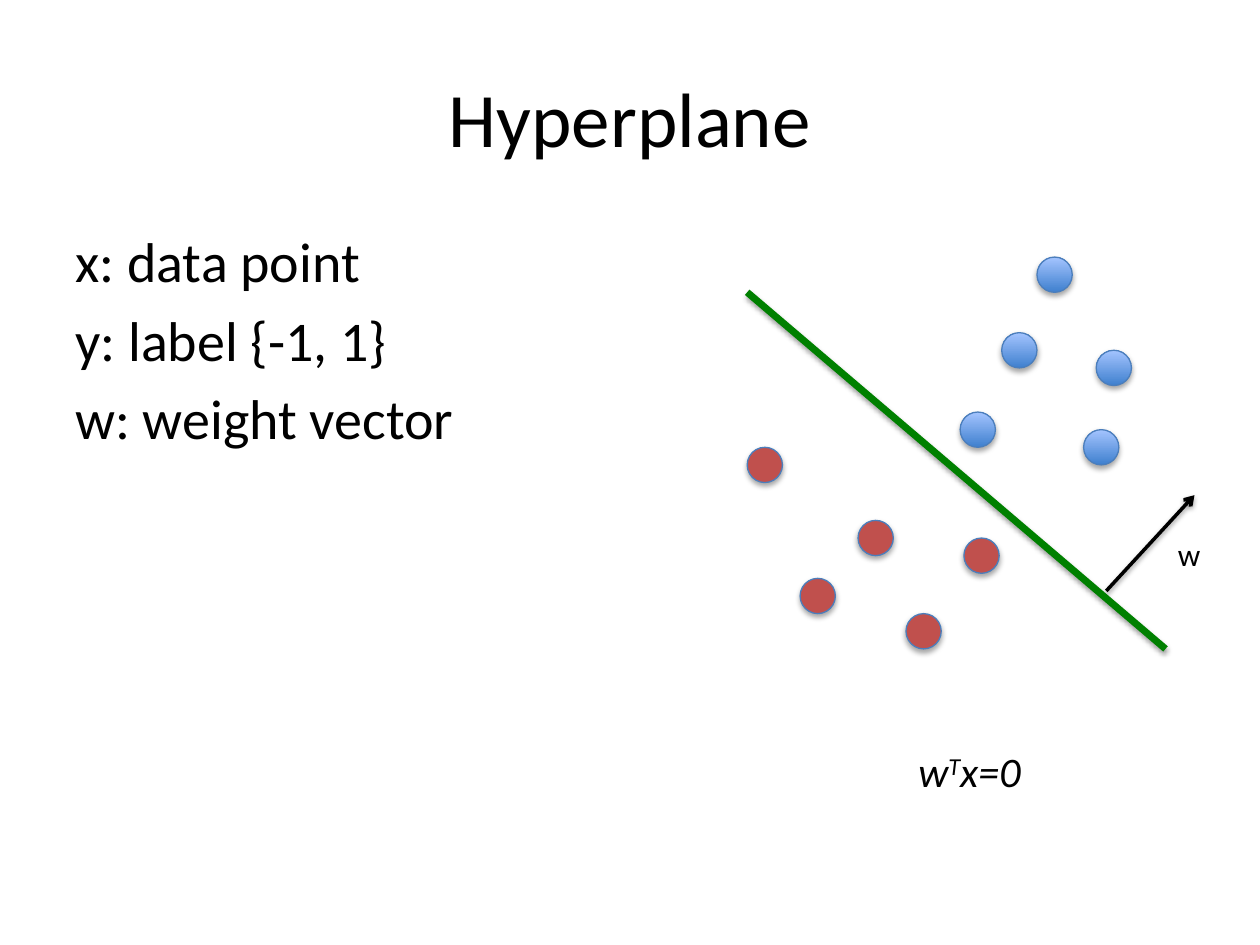
"""Build a slide showing a hyperplane that separates two classes of data points."""
from dataclasses import dataclass

from lxml import etree
from pptx import Presentation
from pptx import util as u
from pptx.dml.color import RGBColor
from pptx.enum import shapes, text
from pptx.oxml.ns import qn


@dataclass(frozen=True)
class Theme:
    font: str = "Calibri"
    title: float = 44
    body: float = 32
    formula: float = 24
    label: float = 18
    ink: RGBColor = RGBColor.from_string("000000")
    boundary: RGBColor = RGBColor.from_string("008000")
    outline: RGBColor = RGBColor.from_string("4B7EBC")
    negative: RGBColor = RGBColor.from_string("C0504D")
    positive: tuple = (RGBColor.from_string("3F80CE"), RGBColor.from_string("A4C4FF"))


theme = Theme()


def add_text(container, box, lines, size, wrap=True):
    frame = container.add_textbox(*map(u.Inches, box)).text_frame
    frame.word_wrap = wrap
    frame.text = "\n".join(lines)
    for paragraph in frame.paragraphs:
        paragraph.font.name = theme.font
        paragraph.font.size = u.Pt(size)
        paragraph.font.color.rgb = theme.ink
    return frame


def add_shadow(shape, distance, opacity):
    effects = etree.SubElement(shape.element.spPr, qn("a:effectLst"))
    shadow = etree.SubElement(
        effects, qn("a:outerShdw"), blurRad=str(u.Pt(3.1)), dist=str(u.Pt(distance)),
        dir="5400000", rotWithShape="0")
    color = etree.SubElement(shadow, qn("a:srgbClr"), val=str(theme.ink))
    etree.SubElement(color, qn("a:alpha"), val=str(opacity * 1000))


presentation = Presentation()
presentation.slide_width = u.Inches(10)
presentation.slide_height = u.Inches(7.5)
slide = presentation.slides.add_slide(presentation.slide_layouts[6])

title = add_text(slide.shapes, (0.5, 0.3, 9, 1.25), ["Hyperplane"], theme.title)
title.vertical_anchor = text.MSO_ANCHOR.MIDDLE
title.paragraphs[0].alignment = text.PP_ALIGN.CENTER

definitions = add_text(
    slide.shapes, (0.5, 1.75, 4.33, 2.45),
    ["x: data point", "y: label {-1, 1}", "w: weight vector"], theme.body)
for paragraph in definitions.paragraphs:
    paragraph.space_before = u.Pt(theme.body * 0.2)

diameter = u.Inches(0.28)
positive_points = [(7.95, 2.64), (8.23, 2.04), (8.7, 2.78), (8.6, 3.41), (7.62, 3.27)]
negative_points = [(5.93, 3.55), (6.81, 4.13), (6.35, 4.59), (7.19, 4.87), (7.65, 4.27)]
for points, is_positive in ((positive_points, True), (negative_points, False)):
    group = slide.shapes.add_group_shape()
    for left, top in points:
        dot = group.shapes.add_shape(
            shapes.MSO_SHAPE.OVAL, u.Inches(left), u.Inches(top), diameter, diameter)
        if is_positive:
            dot.fill.gradient()
            dot.fill.gradient_angle = 90
            for stop, position, color in zip(dot.fill.gradient_stops, (0, 1), theme.positive):
                stop.position = position
                stop.color.rgb = color
        else:
            dot.fill.solid()
            dot.fill.fore_color.rgb = theme.negative
        dot.line.color.rgb = theme.outline
        dot.line.width = u.Pt(0.75)
        add_shadow(dot, 1.8, 35)

weight_group = slide.shapes.add_group_shape()
for container, ends, color, width, has_arrow in (
        (slide.shapes, (5.93, 2.32, 9.25, 5.15), theme.boundary, 4, False),
        (weight_group.shapes, (8.78, 4.69, 9.48, 3.93), theme.ink, 2, True)):
    line = container.add_connector(shapes.MSO_CONNECTOR.STRAIGHT, *map(u.Inches, ends))
    line.line.color.rgb = color
    line.line.width = u.Pt(width)
    if has_arrow:
        etree.SubElement(line.element.spPr.find(qn("a:ln")), qn("a:tailEnd"), type="arrow")
    add_shadow(line, 1.6, 38)

add_text(weight_group.shapes, (9.25, 4.2, 0.38, 0.4), ["w"], theme.label, wrap=False)

formula = add_text(slide.shapes, (7.19, 5.87, 1.12, 0.5), ["w"], theme.formula, wrap=False)
equation = formula.paragraphs[0]
equation.font.italic = True
exponent = equation.add_run()
exponent.text = "T"
exponent.font._element.set("baseline", "30000")
equation.add_run().text = "x=0"

presentation.save("out.pptx")
